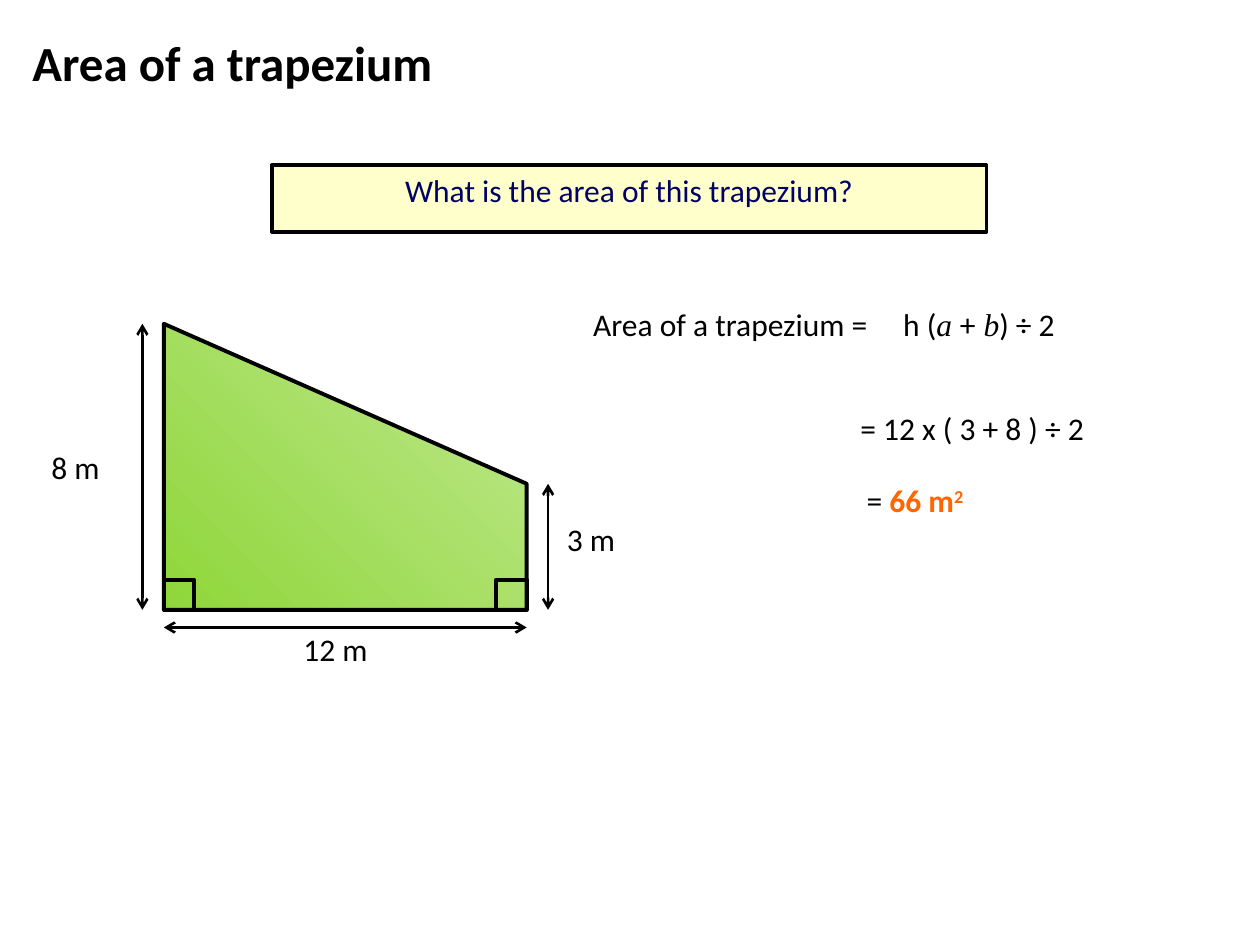
from lxml import etree
from pptx import Presentation
from pptx import util as u
from pptx.dml.color import RGBColor
from pptx.enum import shapes, text
from pptx.oxml import ns

BLACK = "000000"
SERIF = {"font": "Times New Roman", "italic": True}


def rgb(value):
    """Turn a hex string into a colour."""
    return RGBColor.from_string(value)


def add_xml(parent, tag, **attributes):
    """Append a DrawingML element to parent and return it."""
    return etree.SubElement(parent, ns.qn(tag), attributes)


def outline(shape, width=2.25):
    """Give a shape a black outline and no shadow."""
    shape.shadow.inherit = False
    shape.line.color.rgb = rgb(BLACK)
    shape.line.width = u.Pt(width)


def add_run(paragraph, words, size=18, font="Calibri", color=BLACK,
            bold=False, italic=False, baseline=None):
    """Add one formatted run to a paragraph."""
    run = paragraph.add_run()
    run.text = words
    run.font.size = u.Pt(size)
    run.font.name = font
    run.font.bold = bold
    run.font.italic = italic
    run.font.color.rgb = rgb(color)
    if baseline:
        run.font._element.set("baseline", str(baseline * 1000))


def add_label(slide, left, top, width, height, runs):
    """Place a text box made of (words, format) runs and return it."""
    box = slide.shapes.add_textbox(*map(u.Inches, (left, top, width, height)))
    box.text_frame.word_wrap = True
    for words, style in runs:
        add_run(box.text_frame.paragraphs[0], words, **style)
    return box


def add_title(slide, left, top, width, height):
    """Place the slide heading, centred vertically in its box."""
    heading = add_label(slide, left, top, width, height,
                        [("Area of a trapezium", {"size": 28, "bold": True})])
    heading.text_frame.vertical_anchor = text.MSO_ANCHOR.MIDDLE


def add_question(slide, left, top, width, height):
    """Place the framed question."""
    question = slide.shapes.add_shape(
        shapes.MSO_SHAPE.RECTANGLE, *map(u.Inches, (left, top, width, height)))
    outline(question)
    question.fill.solid()
    question.fill.fore_color.rgb = rgb("FFFFCC")
    question.text_frame.vertical_anchor = text.MSO_ANCHOR.TOP
    paragraph = question.text_frame.paragraphs[0]
    paragraph.alignment = text.PP_ALIGN.CENTER
    add_run(paragraph, "What is the area of this trapezium?", color="000066")


def add_dimension(slide, x1, y1, x2, y2):
    """Draw a measuring line with an arrowhead at each end."""
    dimension = slide.shapes.add_connector(
        shapes.MSO_CONNECTOR.STRAIGHT, *map(u.Inches, (x1, y1, x2, y2)))
    dimension.line.color.rgb = rgb(BLACK)
    dimension.line.width = u.Pt(1.5)
    line = dimension.line._get_or_add_ln()
    for end in ("a:headEnd", "a:tailEnd"):
        add_xml(line, end, type="arrow")
    add_xml(dimension._element.spPr, "a:effectLst")


def add_trapezium(slide, left, top, width, height):
    """Draw the trapezium with its right angles and measurements."""
    right, bottom = left + width, top + height
    short_top, corner, gap = top + 1.27, 0.24, 0.17
    points = [(left, bottom), (right, bottom), (right, short_top), (left, top)]
    points = [(u.Inches(x), u.Inches(y)) for x, y in points]
    builder = slide.shapes.build_freeform(*points[0])
    builder.add_line_segments(points[1:], close=True)
    trapezium = builder.convert_to_shape()
    outline(trapezium)
    trapezium.fill.gradient()
    trapezium.fill.gradient_angle = 45
    for stop, color in zip(trapezium.fill.gradient_stops, ("8FD63A", "C0E890")):
        stop.color.rgb = rgb(color)

    for x in (left, right - corner):
        right_angle = slide.shapes.add_shape(
            shapes.MSO_SHAPE.RECTANGLE,
            *map(u.Inches, (x, bottom - corner, corner, corner)))
        outline(right_angle)
        right_angle.fill.background()

    add_dimension(slide, left - gap, top, left - gap, bottom)
    add_dimension(slide, right + gap, short_top, right + gap, bottom)
    add_dimension(slide, left, bottom + 0.14, right, bottom + 0.14)
    add_label(slide, left - 0.99, top + 0.94, 0.76, 0.5, [("8 m", {})])
    add_label(slide, right + 0.22, short_top + 0.24, 0.76, 0.5, [("3 m", {})])
    add_label(slide, left + 1.01, bottom + 0.11, 0.94, 0.5, [("12 m", {})])


def add_working(slide, left, top):
    """Place the formula and the two lines of working below it."""
    formula = add_label(slide, left, top, 4.1, 0.4, [
        ("Area of a trapezium =\th (", {}), ("a ", SERIF), ("+", {}),
        (" b", SERIF), (") ÷ 2", {})])
    properties = formula.text_frame.paragraphs[0]._p.get_or_add_pPr()
    stops = add_xml(properties, "a:tabLst")
    add_xml(stops, "a:tab", pos=str(u.Inches(2.46)), algn="l")
    add_label(slide, left + 2.12, top + 0.83, 2.52, 0.4,
              [("= 12 x ( 3 + 8 ) ÷ 2", {})])
    answer = {"color": "FF6600", "bold": True}
    add_label(slide, left + 2.17, top + 1.4, 1.37, 0.5, [
        ("= ", {}), ("66 m", answer), ("2", {**answer, "baseline": 30})])


def main():
    """Build and save the slide."""
    deck = Presentation()
    deck.slide_width, deck.slide_height = u.Inches(10), u.Inches(7.5)
    slide = deck.slides.add_slide(deck.slide_layouts[6])
    add_title(slide, 0.16, 0.16, 9, 0.67)
    add_question(slide, 2.16, 1.31, 5.67, 0.53)
    add_working(slide, 4.61, 2.37)
    add_trapezium(slide, 1.3, 2.57, 2.88, 2.27)
    deck.save("out.pptx")


if __name__ == "__main__":
    main()
